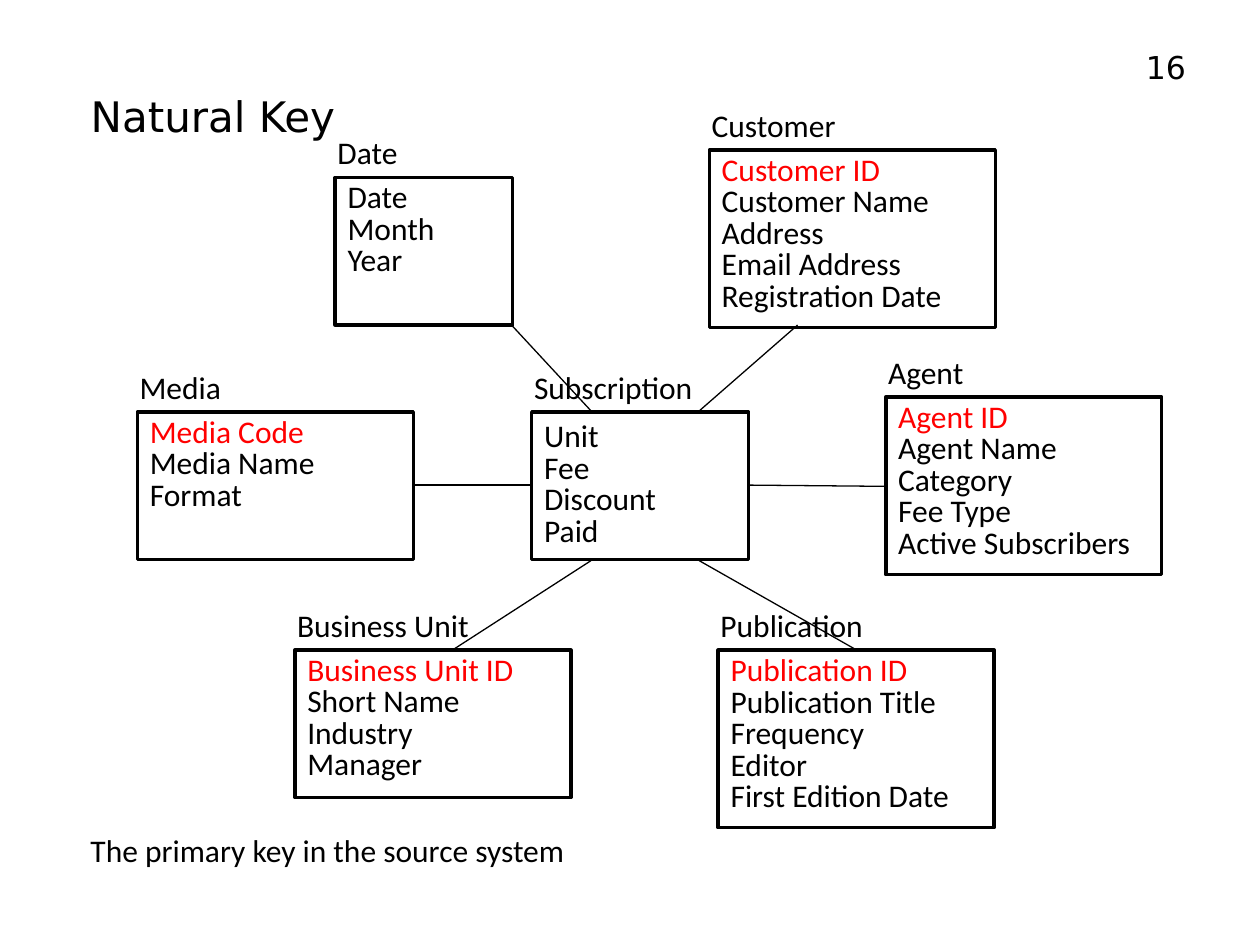
from pptx import Presentation
from pptx.dml.color import RGBColor as RGB
from pptx.enum.shapes import MSO_CONNECTOR as LINK, MSO_SHAPE as FORM
from pptx.enum.text import MSO_ANCHOR as ANCHOR, PP_ALIGN as ALIGN
from pptx.oxml.ns import qn
from pptx.util import Inches, Pt
from lxml.etree import SubElement as add_sub

INK = {"text": "000000", "key": "FF0000", "line": "000000"}
SANS = "DejaVu Sans"

# name: (left, top, width, height, fields, has a key)
TABLES = {
    "Customer": (5.63, 1.19, 2.27, 1.41, [
        "Customer ID", "Customer Name", "Address", "Email Address",
        "Registration Date"], True),
    "Agent": (7.03, 3.15, 2.19, 1.41, [
        "Agent ID", "Agent Name", "Category", "Fee Type",
        "Active Subscribers"], True),
    "Publication": (5.7, 5.16, 2.19, 1.41, [
        "Publication ID", "Publication Title", "Frequency", "Editor",
        "First Edition Date"], True),
    "Business Unit": (2.34, 5.16, 2.19, 1.17, [
        "Business Unit ID", "Short Name", "Industry", "Manager"], True),
    "Media": (1.09, 3.27, 2.19, 1.17, [
        "Media Code", "Media Name", "Format"], True),
    "Date": (2.66, 1.41, 1.41, 1.17, ["Date", "Month", "Year"], False),
    "Subscription": (4.22, 3.27, 1.72, 1.17, [
        "Unit", "Fee", "Discount", "Paid"], False),
}

# Ends of each link between the fact table and a dimension
LINKS = [
    (4.06, 2.58, 4.69, 3.26),
    (6.33, 2.58, 5.54, 3.27),
    (7.03, 3.86, 5.94, 3.85),
    (5.55, 4.45, 6.8, 5.16),
    (4.69, 4.45, 3.59, 5.16),
    (3.28, 3.85, 4.22, 3.85),
]


def write(shape, rows, size=18, font="Calibri", align=ALIGN.LEFT,
          anchor=ANCHOR.TOP, space=None, key=False):
    """Fill a shape with one paragraph per row; a key row comes first."""
    frame = shape.text_frame
    frame.word_wrap = True
    frame.vertical_anchor = anchor
    for i, row in enumerate(rows):
        para = frame.add_paragraph() if i else frame.paragraphs[0]
        para.alignment = align
        if space:
            para.line_spacing = space
        run = para.add_run()
        run.text = row
        run.font.size = Pt(size)
        run.font.name = font
        tone = "key" if key and i == 0 else "text"
        run.font.color.rgb = RGB.from_string(INK[tone])


def add_text(slide, text, left, top, width, **style):
    box = slide.shapes.add_textbox(
        Inches(left), Inches(top), Inches(width), Inches(0.4))
    write(box, [text], **style)


def add_title(slide, text):
    title = slide.shapes.title
    title.left, title.top = Inches(0.62), Inches(0.47)
    title.width, title.height = Inches(4.38), Inches(0.78)
    write(title, [text], size=24, font=SANS, space=1.5)


def add_link(slide, ends):
    link = slide.shapes.add_connector(LINK.STRAIGHT, *map(Inches, ends))
    link.line.width = Pt(0.75)
    link.line.color.rgb = RGB.from_string(INK["line"])
    add_sub(link._element.spPr, qn("a:effectLst"))


def add_entity(slide, name, left, top, width, height, fields, key):
    box = slide.shapes.add_shape(
        FORM.RECTANGLE, *map(Inches, (left, top, width, height)))
    box.shadow.inherit = False
    box.fill.background()
    box.line.width = Pt(2)
    box.line.color.rgb = RGB.from_string(INK["line"])
    anchor = ANCHOR.MIDDLE if name == "Subscription" else ANCHOR.TOP
    write(box, fields, anchor=anchor, space=Pt(18), key=key)
    # Name above the box
    add_text(slide, name, left - 0.08, top - 0.4, min(width, 1.64))


def main():
    deck = Presentation()
    deck.slide_width, deck.slide_height = Inches(10), Inches(7.5)
    slide = deck.slides.add_slide(deck.slide_layouts[5])

    add_title(slide, "Natural Key")

    # Star schema
    for ends in LINKS:
        add_link(slide, ends)
    for name, table in TABLES.items():
        add_entity(slide, name, *table)

    # Caption and page number
    add_text(slide, "The primary key in the source system", 0.62, 6.55, 5)
    add_text(slide, "16", 8.7, 0.33, 0.81, font=SANS, align=ALIGN.RIGHT,
             anchor=ANCHOR.MIDDLE)

    deck.save("out.pptx")


if __name__ == "__main__":
    main()
